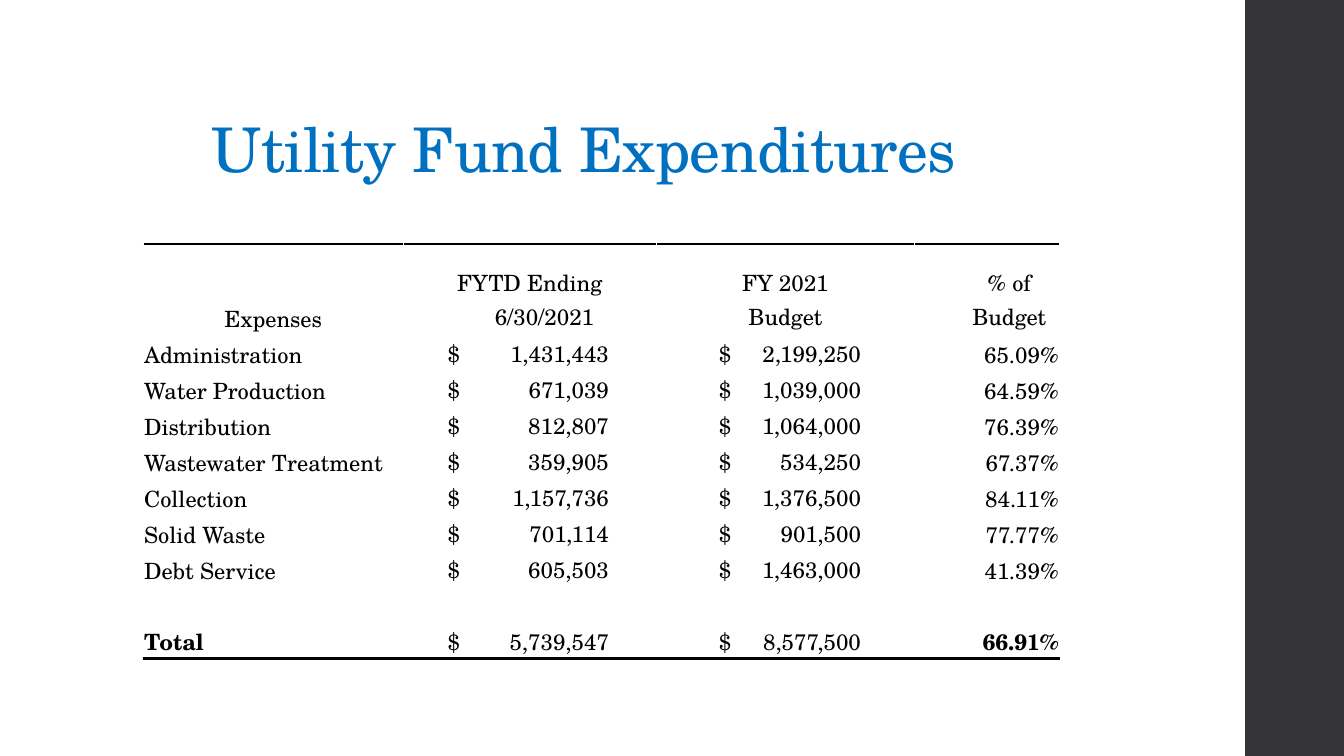
import pptx
import pptx.util
import pptx.dml.color
import pptx.enum.shapes
import pptx.enum.text
import pptx.oxml
import pptx.oxml.ns

Inches = pptx.util.Inches
Pt = pptx.util.Pt
ALIGN = pptx.enum.text.PP_ALIGN
ANCHOR = pptx.enum.text.MSO_ANCHOR
FONT = "TeX Gyre Schola"

WIDTHS = [2.58, 2.51, 2.56, 1.44]
HEADS = [
    ["", "FYTD Ending", "FY 2021", "% of"],
    ["Expenses", "6/30/2021", "Budget", "Budget"],
]
INSETS = [[0.01, 0.01, 0.01, 0.45], [0.01, 0.3, 0.01, 0.45]]
COSTS = [
    ["Administration", "1,431,443", "2,199,250", "65.09%"],
    ["Water Production", "671,039", "1,039,000", "64.59%"],
    ["Distribution", "812,807", "1,064,000", "76.39%"],
    ["Wastewater Treatment", "359,905", "534,250", "67.37%"],
    ["Collection", "1,157,736", "1,376,500", "84.11%"],
    ["Solid Waste", "701,114", "901,500", "77.77%"],
    ["Debt Service", "605,503", "1,463,000", "41.39%"],
    ["", "", "", ""],
    ["Total", "5,739,547", "8,577,500", "66.91%"],
]
MONEY = {1: (0.44, 1.6), 2: (0.62, 1.41)}


def color(code):
    return pptx.dml.color.RGBColor.from_string(code)


def style(item, values):
    for name, value in values.items():
        setattr(item, name, value)


def paint(fill, code):
    fill.solid()
    fill.fore_color.rgb = color(code)


def write(para, text, size, code, bold=False):
    run = para.add_run()
    run.text = text
    style(run.font, {"name": FONT, "size": Pt(size), "bold": bold})
    run.font.color.rgb = color(code)
    return run


def add_title(slide, text):
    title = slide.shapes.title
    style(title, {"left": Inches(2), "top": Inches(0.44),
                  "width": Inches(8.37), "height": Inches(1.45)})
    frame = title.text_frame
    style(frame, {"word_wrap": True, "vertical_anchor": ANCHOR.BOTTOM,
                  "auto_size": pptx.enum.text.MSO_AUTO_SIZE.NONE})
    para = frame.paragraphs[0]
    style(para, {"alignment": ALIGN.LEFT, "line_spacing": 0.9})
    run = write(para, text, 44, "0070C0")
    run.font._element.set("spc", "-50")


def add_band(slide):
    band = slide.shapes.add_shape(
        pptx.enum.shapes.MSO_SHAPE.RECTANGLE,
        Inches(12.35), 0, Inches(0.98), Inches(7.5))
    band.shadow.inherit = False
    paint(band.fill, "353537")
    band.line.fill.background()


def add_rule(cell, side):
    line = pptx.oxml.parse_xml(
        f'<a:{side} {pptx.oxml.ns.nsdecls("a")} w="{Pt(2)}">'
        '<a:solidFill><a:srgbClr val="000000"/></a:solidFill>'
        f'</a:{side}>')
    cell._tc.get_or_add_tcPr().insert(0, line)


def add_tab(para, place):
    tabs = pptx.oxml.parse_xml(
        f'<a:tabLst {pptx.oxml.ns.nsdecls("a")}>'
        f'<a:tab pos="{Inches(place)}" algn="r"/></a:tabLst>')
    para._p.get_or_add_pPr().append(tabs)


def fill_cell(cell, text, align, anchor, inset=0.01, bold=False):
    paint(cell.fill, "FFFFFF")
    style(cell, {"margin_left": Inches(inset), "margin_right": Inches(0.01),
                 "margin_top": Inches(0.01), "margin_bottom": 0,
                 "vertical_anchor": anchor})
    para = cell.text_frame.paragraphs[0]
    para.alignment = align
    if text:
        write(para, text, 16, "000000", bold)
    return para


def fill_head(table):
    for row, texts in enumerate(HEADS):
        for col, text in enumerate(texts):
            anchor = ANCHOR.TOP if row and col else ANCHOR.BOTTOM
            fill_cell(table.cell(row, col), text, ALIGN.CENTER, anchor,
                      INSETS[row][col])


def fill_costs(table):
    for row, texts in enumerate(COSTS, len(HEADS)):
        bold = texts[0] == "Total"
        for col, text in enumerate(texts):
            cell = table.cell(row, col)
            if text and col in MONEY:
                inset, stop = MONEY[col]
                para = fill_cell(cell, f"$\t{text}", ALIGN.LEFT,
                                 ANCHOR.MIDDLE, inset)
                add_tab(para, stop)
            else:
                align = ALIGN.RIGHT if col == 3 else ALIGN.LEFT
                fill_cell(cell, text, align, ANCHOR.BOTTOM, bold=bold)


def add_costs(slide):
    count = len(HEADS) + len(COSTS)
    table = slide.shapes.add_table(
        count, len(WIDTHS), Inches(1.42), Inches(2.42),
        Inches(sum(WIDTHS)), Inches(3.92)).table
    style(table, {"first_row": False, "horz_banding": False})
    for col, width in zip(table.columns, WIDTHS):
        col.width = Inches(width)
    table.rows[0].height = Inches(0.55)
    fill_head(table)
    fill_costs(table)
    for col in range(len(WIDTHS)):
        add_rule(table.cell(0, col), "lnT")
        add_rule(table.cell(count - 1, col), "lnB")


def main():
    deck = pptx.Presentation()
    style(deck, {"slide_width": Inches(13.33), "slide_height": Inches(7.5)})
    slide = deck.slides.add_slide(deck.slide_layouts[5])
    add_band(slide)
    add_title(slide, "Utility Fund Expenditures")
    add_costs(slide)
    deck.save("out.pptx")


if __name__ == "__main__":
    main()
